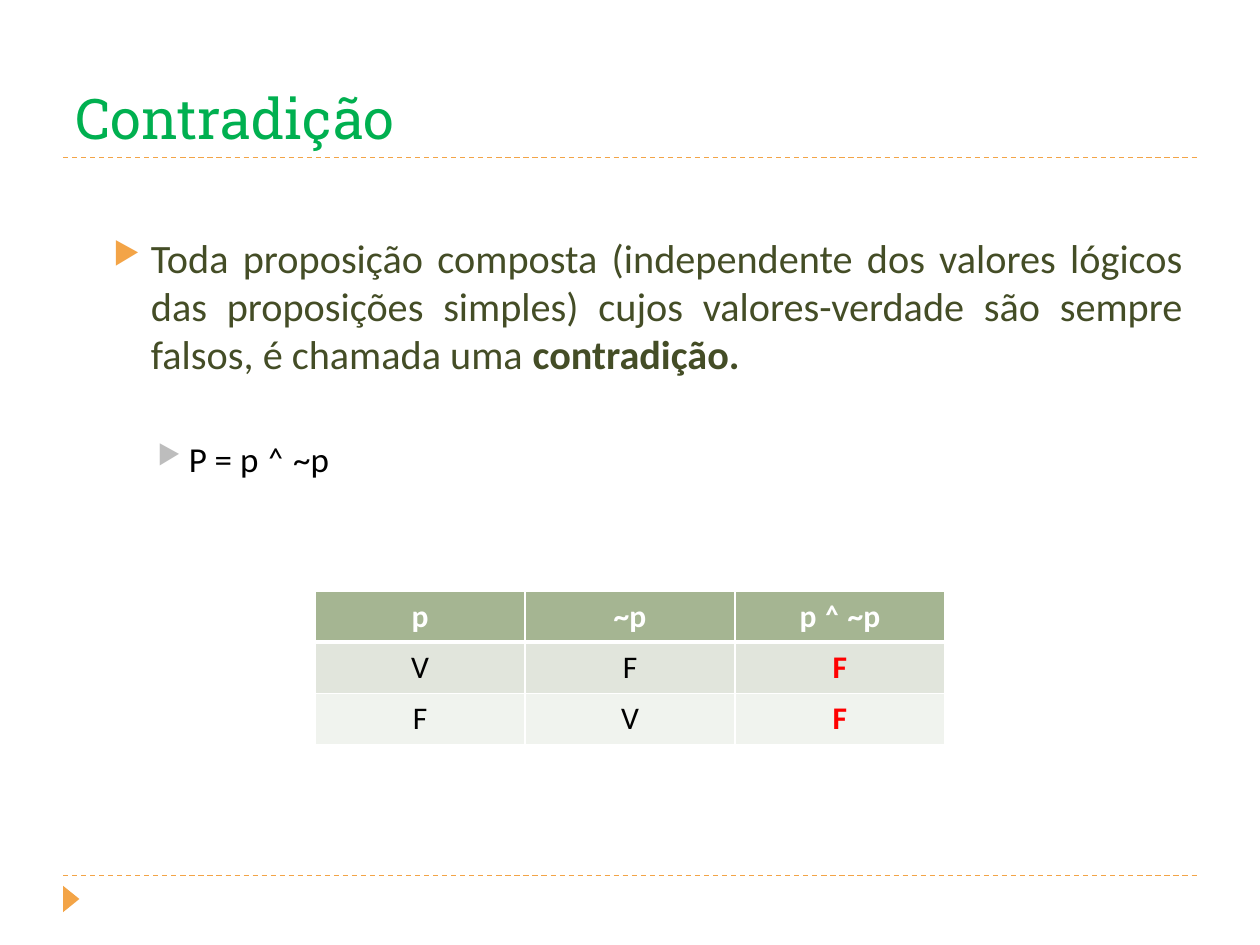
from lxml.etree import SubElement
from pptx import Presentation
from pptx.dml.color import RGBColor
from pptx.enum.dml import MSO_LINE
from pptx.enum.shapes import MSO_CONNECTOR, MSO_SHAPE
from pptx.enum.text import MSO_ANCHOR, MSO_AUTO_SIZE, PP_ALIGN
from pptx.oxml.ns import qn
from pptx.util import Inches, Pt

COLORS = {
    "orange": "F3A447", "green": "00B050", "olive": "444D26", "gray": "BDBDBD",
    "black": "000000", "white": "FFFFFF", "red": "FF0000",
    "header": "A5B592", "band_dark": "E1E5DC", "band_light": "F0F3EE",
}
TITLE = "Contradição"
BULLETS = [
    {"runs": [("Toda proposição composta (independente dos valores lógicos das "
               "proposições simples) cujos valores-verdade são sempre falsos, "
               "é chamada uma ", False), ("contradição.", True)],
     "size": 23, "color": "olive", "bullet": "orange",
     "indent": (0.6, -0.3), "before": 0},
    {"runs": [("P = p ˄ ~p", False)],
     "size": 20, "color": "black", "bullet": "gray",
     "indent": (0.9, -0.25), "before": 34},
]
TRUTH_TABLE = [("p", "~p", "p ˄ ~p"), ("V", "F", "F"), ("F", "V", "F")]
ROW_FILLS = ["header", "band_dark", "band_light"]
RULE_HEIGHTS = [6.95, 1.25]


def rgb(name):
    return RGBColor.from_string(COLORS[name])


def add_run(paragraph, text, size, color, bold=False, font="Calibri"):
    run = paragraph.add_run()
    run.text = text
    run.font.name, run.font.size, run.font.bold = font, Pt(size), bold
    run.font.color.rgb = rgb(color)


def add_color(parent, name):
    SubElement(parent, qn("a:srgbClr"), val=COLORS[name])


def set_bullet(paragraph, color, indent):
    left, hanging = indent
    properties = paragraph._p.get_or_add_pPr()
    properties.set("marL", str(Inches(left)))
    properties.set("indent", str(Inches(hanging)))
    add_color(SubElement(properties, qn("a:buClr")), color)
    SubElement(properties, qn("a:buSzPct"), val="76000")
    SubElement(properties, qn("a:buChar"), char="▶")


def set_borders(cell, widths):
    properties = cell._tc.get_or_add_tcPr()
    for position, (side, width) in enumerate(widths.items()):
        line = properties.makeelement(qn(f"a:{side}"), {"w": str(Pt(width))})
        add_color(SubElement(line, qn("a:solidFill")), "white")
        properties.insert(position, line)


presentation = Presentation()
presentation.slide_width, presentation.slide_height = Inches(10), Inches(7.5)
slide = presentation.slides.add_slide(presentation.slide_layouts[5])

# Dashed rules and corner marker
for y in RULE_HEIGHTS:
    rule = slide.shapes.add_connector(
        MSO_CONNECTOR.STRAIGHT, Inches(0.5), Inches(y), Inches(9.5), Inches(y))
    rule.line.color.rgb = rgb("orange")
    rule.line.width = Pt(0.75)
    rule.line.dash_style = MSO_LINE.DASH
    SubElement(rule._element.spPr, qn("a:effectLst"))

marker = slide.shapes.add_shape(
    MSO_SHAPE.ISOSCELES_TRIANGLE, Inches(0.46), Inches(7.07), Inches(0.21), Inches(0.13))
marker.rotation = 90
marker.shadow.inherit = False
marker.fill.solid()
marker.fill.fore_color.rgb = rgb("orange")
marker.line.fill.background()

# Title
title = slide.shapes.title
title.left, title.top, title.width, title.height = map(Inches, (0.5, 0.17, 9, 1.08))
title.text_frame.auto_size = MSO_AUTO_SIZE.NONE
title.text_frame.vertical_anchor = MSO_ANCHOR.BOTTOM
title_paragraph = title.text_frame.paragraphs[0]
title_paragraph.alignment = PP_ALIGN.LEFT
add_run(title_paragraph, TITLE, 32, "green", font="Roboto Slab")

# Definition and example
body = slide.shapes.add_textbox(Inches(0.5), Inches(1.8), Inches(9), Inches(2.5))
body.text_frame.word_wrap = True
for index, item in enumerate(BULLETS):
    paragraph = body.text_frame.add_paragraph() if index else body.text_frame.paragraphs[0]
    set_bullet(paragraph, item["bullet"], item["indent"])
    paragraph.alignment = PP_ALIGN.JUSTIFY
    paragraph.space_before = Pt(item["before"])
    for text, bold in item["runs"]:
        add_run(paragraph, text, item["size"], item["color"], bold)

# Truth table: the result column is highlighted
row_count, column_count = len(TRUTH_TABLE), len(TRUTH_TABLE[0])
table = slide.shapes.add_table(
    row_count, column_count, Inches(2.5), Inches(4.69), Inches(5), Inches(1.22)).table
for r, values in enumerate(TRUTH_TABLE):
    for c, value in enumerate(values):
        cell = table.cell(r, c)
        cell.fill.solid()
        cell.fill.fore_color.rgb = rgb(ROW_FILLS[r])
        cell.vertical_anchor = MSO_ANCHOR.MIDDLE
        is_header, is_result = r == 0, c == column_count - 1
        color = "white" if is_header else "red" if is_result else "black"
        paragraph = cell.text_frame.paragraphs[0]
        paragraph.alignment = PP_ALIGN.CENTER
        add_run(paragraph, value, 18, color, is_header or is_result)
        set_borders(cell, {"lnL": 1, "lnR": 1, "lnT": 3 if r == 1 else 1,
                           "lnB": 3 if is_header else 1})

presentation.save("out.pptx")
